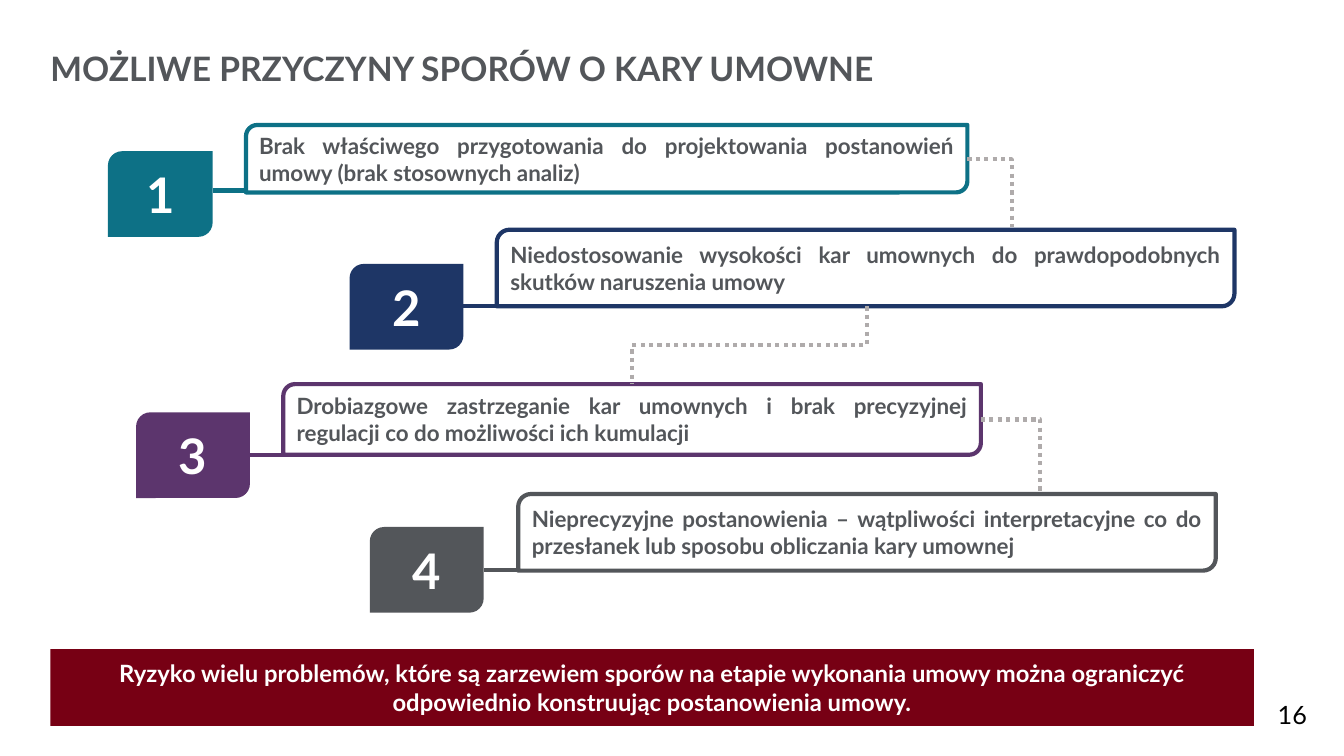
"""Build the slide on likely causes of disputes over contractual penalties."""
from lxml import etree
from pptx import Presentation
from pptx.dml.color import RGBColor
from pptx.enum import dml, shapes, text
from pptx.oxml.ns import qn
from pptx.util import Cm, Pt

FONT = "Lato"
COLOURS = {
    "teal": "0D7186", "navy": "1E3666", "purple": "5C356D", "grey": "53565A",
    "maroon": "770014", "dots": "AFABAB", "white": "FFFFFF", "black": "000000",
}
TITLE = "MOŻLIWE PRZYCZYNY SPORÓW O KARY UMOWNE"
SUMMARY = ("Ryzyko wielu problemów, które są zarzewiem sporów na etapie wykonania umowy "
           "można ograniczyć odpowiednio konstruując postanowienia umowy.")
PAGE_NUMBER = "16"
CAUSES = [
    {"colour": "teal", "panel": (6.2, 3.15, 18.18, 1.7), "tile": (2.72, 3.81, 2.64), "link": 4.8,
     "words": "Brak właściwego przygotowania do projektowania postanowień umowy "
              "(brak stosownych analiz)"},
    {"colour": "navy", "panel": (12.52, 5.79, 18.59, 1.93), "tile": (8.81, 6.65, 2.87), "link": 7.72,
     "words": "Niedostosowanie wysokości kar umownych do prawdopodobnych skutków "
              "naruszenia umowy"},
    {"colour": "purple", "panel": (7.14, 9.68, 17.58, 1.78), "tile": (3.43, 10.39, 2.87), "link": 11.46,
     "words": "Drobiazgowe zastrzeganie kar umownych i brak precyzyjnej regulacji "
              "co do możliwości ich kumulacji"},
    {"colour": "grey", "panel": (13.06, 12.45, 17.58, 1.93), "tile": (9.32, 13.28, 2.87), "link": 14.36,
     "words": "Nieprecyzyjne postanowienia – wątpliwości interpretacyjne co do przesłanek "
              "lub sposobu obliczania kary umownej"},
]
TILE_HEIGHT = 2.16
LINK_LENGTH = 0.84
CORNER_PATHS = [((24.38, 4.01), (25.5, 5.72)), ((24.72, 10.57), (26.21, 12.45))]
STEP_PATH = ((21.84, 7.72), (15.93, 9.68))


def rgb(name):
    return RGBColor.from_string(COLOURS[name])


def write(box, words, size, colour, bold=True, align=text.PP_ALIGN.LEFT):
    box.text_frame.word_wrap = True
    para = box.text_frame.paragraphs[0]
    para.alignment = align
    span = para.add_run()
    span.text = words
    span.font.name, span.font.size, span.font.bold = FONT, Pt(size), bold
    span.font.color.rgb = rgb(colour)
    return para


def add_block(page, preset, frame, fill=None, outline=None):
    block = page.shapes.add_shape(preset, *map(Cm, frame))
    block.shadow.inherit = False
    block.text_frame.vertical_anchor = text.MSO_ANCHOR.MIDDLE
    if fill:
        block.fill.solid()
        block.fill.fore_color.rgb = rgb(fill)
    else:
        block.fill.background()
    if outline:
        block.line.color.rgb = rgb(outline)
        block.line.width = Pt(3)
    else:
        block.line.fill.background()
    return block


def add_line(page, kind, start, end, colour):
    line = page.shapes.add_connector(kind, *map(Cm, start + end))
    line.line.color.rgb = rgb(colour)
    line.line.width = Pt(3)
    if kind == shapes.MSO_CONNECTOR.ELBOW:
        line.line.dash_style = dml.MSO_LINE.ROUND_DOT
    etree.SubElement(line.element.spPr, qn("a:effectLst"))
    return line


def add_cause(page, number, cause):
    diagonal = shapes.MSO_SHAPE.ROUND_2_DIAG_RECTANGLE
    colour = cause["colour"]
    panel = add_block(page, diagonal, cause["panel"], outline=colour)
    para = write(panel, cause["words"], 16, "grey", align=text.PP_ALIGN.JUSTIFY)
    para.space_after = Pt(18)
    left, top, width = cause["tile"]
    tile = add_block(page, diagonal, (left, top, width, TILE_HEIGHT), fill=colour)
    write(tile, str(number), 35, "white", align=text.PP_ALIGN.CENTER)
    edge = left + width
    add_line(page, shapes.MSO_CONNECTOR.STRAIGHT, (edge, cause["link"]),
             (edge + LINK_LENGTH, cause["link"]), colour)


def add_dotted_paths(page):
    elbow = shapes.MSO_CONNECTOR.ELBOW
    for start, end in CORNER_PATHS:
        corner = add_line(page, elbow, start, end, "dots")
        corner.element.spPr.find(qn("a:prstGeom")).set("prst", "bentConnector2")
    (right, top), (left, bottom) = STEP_PATH
    middle_x, middle_y = (left + right) / 2, (top + bottom) / 2
    half_width, half_height = (bottom - top) / 2, (right - left) / 2
    step = add_line(page, elbow, (middle_x - half_width, middle_y - half_height),
                    (middle_x + half_width, middle_y + half_height), "dots")
    step.element.spPr.find(qn("a:xfrm")).set("rot", str(90 * 60000))


def main():
    deck = Presentation()
    deck.slide_width, deck.slide_height = Cm(33.87), Cm(19.05)
    page = deck.slides.add_slide(deck.slide_layouts[6])

    title = page.shapes.add_textbox(Cm(1.27), Cm(1.22), Cm(26.87), Cm(1.02))
    frame = title.text_frame
    frame.margin_left = frame.margin_right = frame.margin_top = frame.margin_bottom = 0
    write(title, TITLE, 24, "grey")

    for number, cause in enumerate(CAUSES, 1):
        add_cause(page, number, cause)
    add_dotted_paths(page)

    banner = add_block(page, shapes.MSO_SHAPE.RECTANGLE, (1.27, 16.36, 30.33, 1.93), fill="maroon")
    write(banner, SUMMARY, 17, "white", align=text.PP_ALIGN.CENTER)
    folio = page.shapes.add_textbox(Cm(31.95), Cm(17.5), Cm(1.37), Cm(0.91))
    write(folio, PAGE_NUMBER, 18, "black", bold=False)
    deck.save("out.pptx")


if __name__ == "__main__":
    main()
